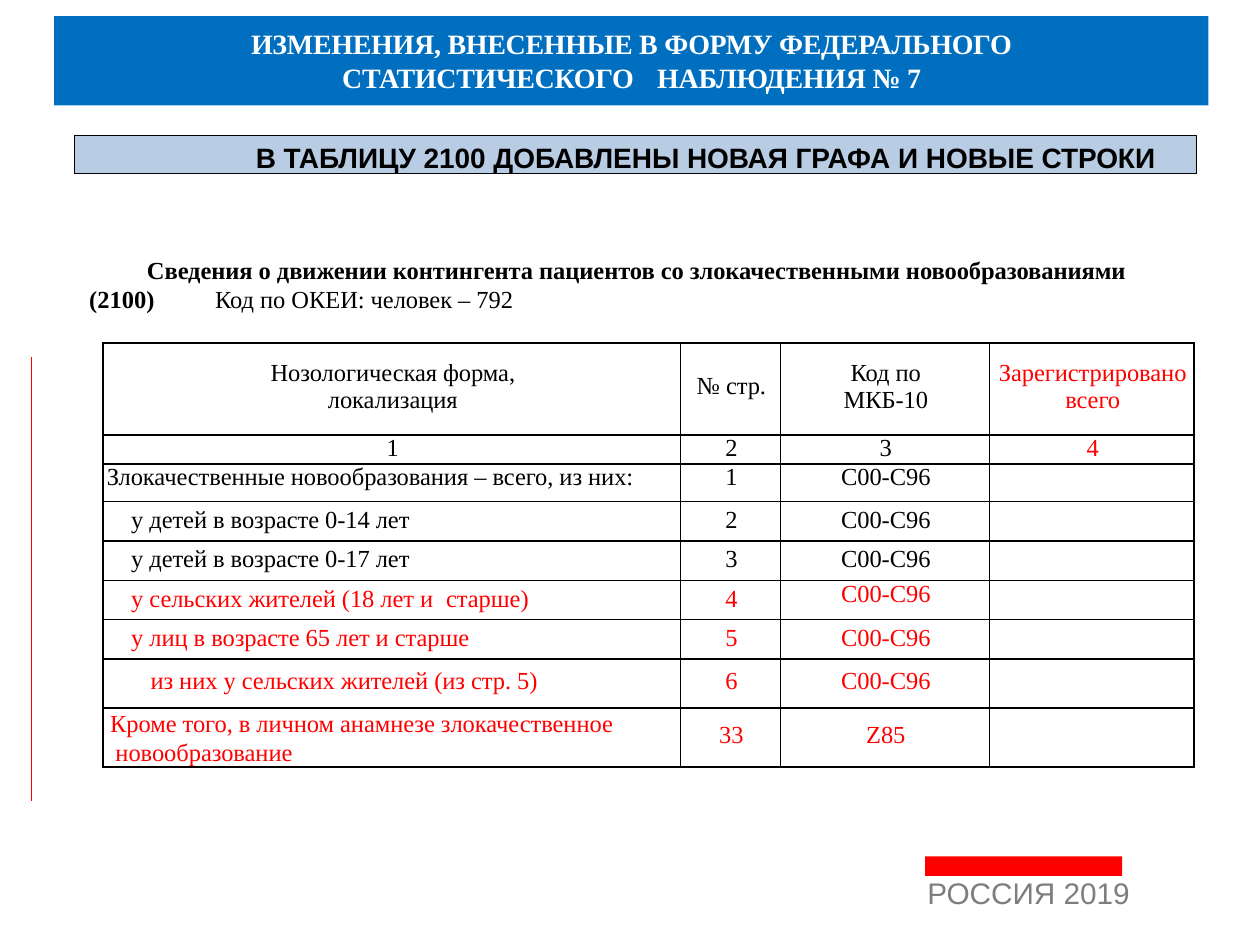
from pptx import Presentation
from pptx.dml.color import RGBColor
from pptx.enum.shapes import MSO_CONNECTOR, MSO_SHAPE
from pptx.enum.text import MSO_ANCHOR, MSO_AUTO_SIZE, PP_ALIGN
from pptx.oxml.ns import qn
from pptx.util import Pt
from lxml import etree

RECT = MSO_SHAPE.RECTANGLE
STRAIGHT = MSO_CONNECTOR.STRAIGHT
TOP = MSO_ANCHOR.TOP
NO_FIT = MSO_AUTO_SIZE.NONE
LEFT, CENTER = PP_ALIGN.LEFT, PP_ALIGN.CENTER

COLORS = {"red": "FF0000", "blue": "006FC0", "pale": "B8CDE4",
          "black": "000000", "white": "FFFFFF", "grey": "7E7E7E"}
SERIF, SANS = "Times New Roman", "Arial"

COLUMN_WIDTHS = [330, 57, 119.5, 117]
ROW_HEIGHTS = [52.5, 16.6, 21.6, 22.5, 22.5, 22.5, 22.5, 28, 33.8]
TOP_MARGINS = [9.4, 0, 0, 2.9, 2.9, 2.9, 2.9, 5, 7.9]
NAME_INDENTS = [0, 0, 2, 16, 16, 16, 16, 27, 7]
FIRST_RED_ROW = 5
ROWS = [
    ["Нозологическая форма,\nлокализация", "№ стр.", "Код по\nМКБ-10",
     "Зарегистрировано\nвсего"],
    ["1", "2", "3", "4"],
    ["Злокачественные новообразования – всего, из них:", "1", "С00-С96", ""],
    ["у детей в возрасте 0-14 лет", "2", "С00-С96", ""],
    ["у детей в возрасте 0-17 лет", "3", "С00-С96", ""],
    ["у сельских жителей (18 лет и\tстарше)", "4", "С00-С96", ""],
    ["у лиц в возрасте 65 лет и старше", "5", "С00-С96", ""],
    ["из них у сельских жителей (из стр. 5)", "6", "С00-С96", ""],
    ["Кроме того, в личном анамнезе злокачественное новообразование",
     "33", "Z85", ""],
]
# Cells whose text starts at another height than the rest of their row
SPECIAL_MARGINS = {(0, 1): 17, (5, 2): 0, (8, 0): 0}


def rgb(color):
    return RGBColor.from_string(COLORS[color])


def set_values(target, values):
    for name, value in values.items():
        setattr(target, name, value)


def set_margins(target, top=0):
    set_values(target, {"margin_left": 0, "margin_right": 0,
                        "margin_top": Pt(top), "margin_bottom": 0})


def add_run(paragraph, text, color, size=14, font=SERIF, bold=False, spacing=-0.05):
    run = paragraph.add_run()
    run.text = text
    set_values(run.font, {"name": font, "size": Pt(size), "bold": bold})
    run.font.color.rgb = rgb(color)
    run._r.get_or_add_rPr().set("spc", str(round(spacing * 100)))


def set_indent(paragraph, left=0, first=0, tab=None):
    properties = paragraph._p.get_or_add_pPr()
    properties.set("marL", str(Pt(left)))
    properties.set("indent", str(Pt(first)))
    if tab:
        tab_list = etree.SubElement(properties, qn("a:tabLst"))
        etree.SubElement(tab_list, qn("a:tab"), pos=str(Pt(tab)), algn="l")


def prepare_frame(frame, top=0):
    set_values(frame, {"word_wrap": True, "auto_size": NO_FIT,
                       "vertical_anchor": TOP})
    set_margins(frame, top)
    return frame


def add_text_box(slide, left, top, width, height):
    box = slide.shapes.add_textbox(Pt(left), Pt(top), Pt(width), Pt(height))
    return prepare_frame(box.text_frame)


def add_bar(slide, left, top, width, height, color, outlined=False):
    bar = slide.shapes.add_shape(RECT, Pt(left), Pt(top), Pt(width), Pt(height))
    bar.shadow.inherit = False
    bar.fill.solid()
    bar.fill.fore_color.rgb = rgb(color)
    if outlined:
        bar.line.color.rgb = rgb("black")
        bar.line.width = Pt(0.25)
    else:
        bar.line.fill.background()
    return bar


def add_rule(slide, x, top, bottom):
    rule = slide.shapes.add_connector(STRAIGHT, Pt(x), Pt(top), Pt(x), Pt(bottom))
    rule.line.color.rgb = rgb("red")
    rule.line.width = Pt(0.75)
    etree.SubElement(rule._element.spPr, qn("a:effectLst"))


def add_heading(slide):
    bar = add_bar(slide, 31, 9.2, 659.5, 51, "blue")
    title = slide.shapes.title
    set_values(title, {"left": Pt(140), "top": Pt(14.4),
                       "width": Pt(442), "height": Pt(40)})
    bar._element.addnext(title._element)
    frame = prepare_frame(title.text_frame, 0.7)
    lines = ["ИЗМЕНЕНИЯ, ВНЕСЕННЫЕ В ФОРМУ ФЕДЕРАЛЬНОГО",
             "СТАТИСТИЧЕСКОГО\tНАБЛЮДЕНИЯ № 7"]
    for index, line in enumerate(lines):
        paragraph = frame.add_paragraph() if index else frame.paragraphs[0]
        paragraph.alignment = CENTER
        set_indent(paragraph, tab=175 if "\t" in line else None)
        add_run(paragraph, line, "white", 16, bold=True, spacing=-0.15)


def add_banner(slide):
    banner = add_bar(slide, 42.5, 77.2, 641, 22, "pale", outlined=True)
    paragraph = prepare_frame(banner.text_frame, 2.9).paragraphs[0]
    paragraph.alignment = LEFT
    set_indent(paragraph, 103.7)
    add_run(paragraph, "В ТАБЛИЦУ 2100 ДОБАВЛЕНЫ НОВАЯ ГРАФА И НОВЫЕ СТРОКИ",
            "black", 16, SANS, True, 0)


def add_table_caption(slide):
    frame = add_text_box(slide, 51, 145.5, 631, 36)
    caption = frame.paragraphs[0]
    set_indent(caption, first=33)
    add_run(caption, "Сведения о движении контингента пациентов со "
            "злокачественными новообразованиями", "black", bold=True)
    unit_code = frame.add_paragraph()
    set_indent(unit_code, tab=72.5)
    add_run(unit_code, "(2100)\t", "black", bold=True, spacing=0)
    add_run(unit_code, "Код по ОКЕИ: человек – 792", "black")


def set_borders(cell):
    properties = cell._tc.get_or_add_tcPr()
    for index, side in enumerate(("lnL", "lnR", "lnT", "lnB")):
        border = etree.Element(qn(f"a:{side}"), w=str(Pt(1)))
        fill = etree.SubElement(border, qn("a:solidFill"))
        etree.SubElement(fill, qn("a:srgbClr"), val=COLORS["black"])
        properties.insert(index, border)


def fill_cell(cell, row, column, text):
    cell.fill.background()
    set_borders(cell)
    is_name = column == 0 and row > 1
    is_red = row >= FIRST_RED_ROW or column == 3
    if not text:
        set_margins(cell)
        cell.text_frame.paragraphs[0]._p.get_or_add_endParaRPr().set("sz", "1400")
        return
    set_margins(cell, SPECIAL_MARGINS.get((row, column), TOP_MARGINS[row]))
    for index, line in enumerate(text.split("\n")):
        frame = cell.text_frame
        paragraph = frame.add_paragraph() if index else frame.paragraphs[0]
        paragraph.alignment = LEFT if is_name else CENTER
        last_name = is_name and row == len(ROWS) - 1
        set_indent(paragraph, NAME_INDENTS[row] if is_name else 1,
                   -3 if last_name else 0, 204 if "\t" in line else None)
        if last_name:
            paragraph.line_spacing = Pt(16.8)
        add_run(paragraph, line, "red" if is_red else "black")


def add_patient_table(slide):
    frame = slide.shapes.add_table(
        len(ROWS), len(COLUMN_WIDTHS), Pt(59), Pt(196),
        Pt(sum(COLUMN_WIDTHS)), Pt(sum(ROW_HEIGHTS)))
    table = frame.table
    set_values(table, {"first_row": False, "horz_banding": False})
    for column, width in zip(table.columns, COLUMN_WIDTHS):
        column.width = Pt(width)
    for row, height in zip(table.rows, ROW_HEIGHTS):
        row.height = Pt(height)
    for row, texts in enumerate(ROWS):
        for column, text in enumerate(texts):
            fill_cell(table.cell(row, column), row, column, text)


def add_footer(slide):
    add_bar(slide, 528.7, 489.3, 112.5, 11.3, "red")
    paragraph = add_text_box(slide, 530, 500.5, 118, 21).paragraphs[0]
    paragraph.line_spacing = Pt(19.9)
    add_run(paragraph, "РОССИЯ 2019", "grey", 17, SANS)


def main():
    presentation = Presentation()
    set_values(presentation, {"slide_width": Pt(720), "slide_height": Pt(540)})
    slide = presentation.slides.add_slide(presentation.slide_layouts[5])
    add_rule(slide, 18.2, 204, 458)
    add_heading(slide)
    add_footer(slide)
    add_patient_table(slide)
    add_table_caption(slide)
    add_banner(slide)
    presentation.save("out.pptx")


if __name__ == "__main__":
    main()
